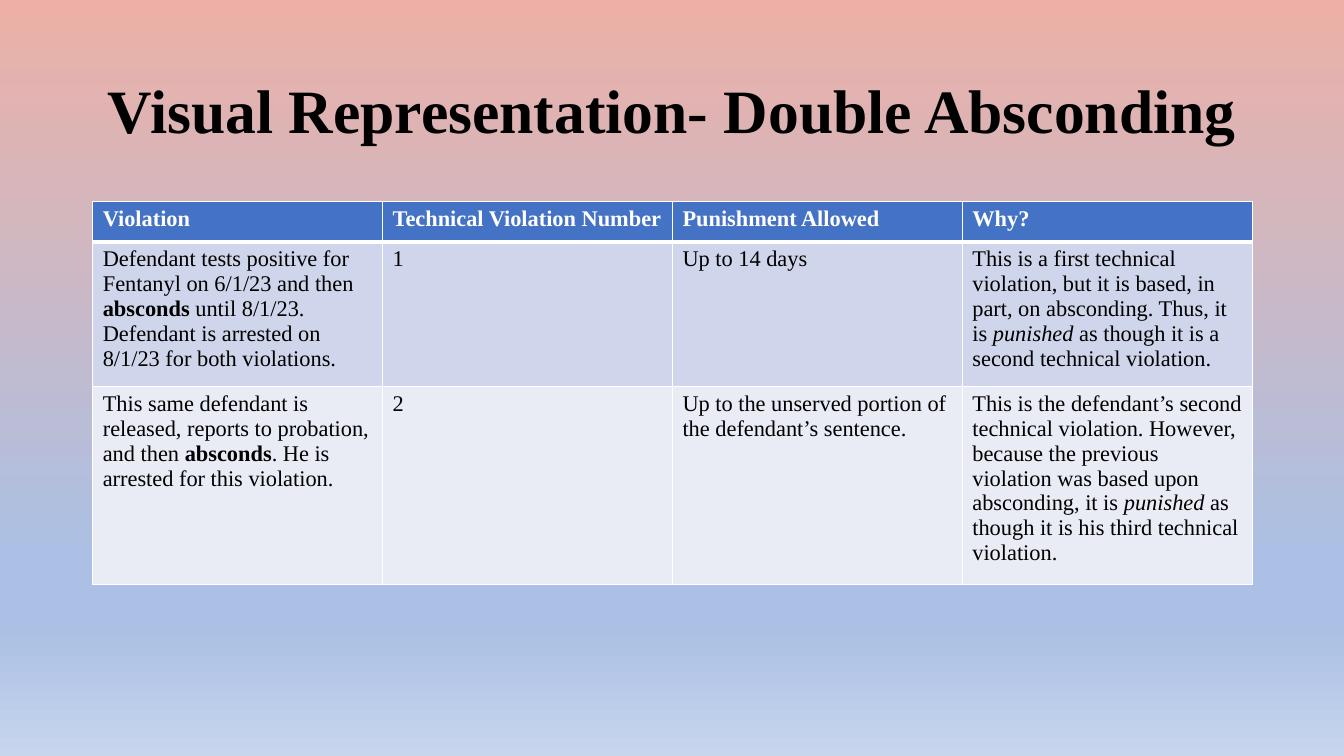
from lxml.etree import SubElement as Sub
from pptx import Presentation
from pptx.dml.color import RGBColor as RGB
from pptx.enum.text import MSO_ANCHOR as Anchor, PP_ALIGN as Align
from pptx.oxml.ns import qn
from pptx.util import Inches, Pt

FONT = "Times New Roman"
BLACK = RGB(0x00, 0x00, 0x00)
WHITE = RGB(0xFF, 0xFF, 0xFF)
BLUE = RGB(0x44, 0x72, 0xC4)
MID = RGB(0xCF, 0xD5, 0xEA)
PALE = RGB(0xE9, 0xEB, 0xF5)
ROSE = RGB(0xEC, 0xB0, 0xA6)
SKY = RGB(0xAB, 0xC0, 0xE4)
MIST = RGB(0xC7, 0xD5, 0xED)

STOPS = [(0, ROSE), (74, SKY), (83, SKY), (100, MIST)]
LEFT, WIDTH = 0.92, 11.5
FILLS = [BLUE, MID, PALE]
HEIGHTS = [0.4, 1.33, 1.83]

# Each cell is a list of (text, style) runs: "b" bold, "i" italic, "" plain.
ROWS = [
    [
        [("Violation", "b")],
        [("Technical Violation Number", "b")],
        [("Punishment Allowed", "b")],
        [("Why?", "b")],
    ],
    [
        [("Defendant tests positive for Fentanyl on 6/1/23 and then ", ""),
         ("absconds", "b"),
         (" until 8/1/23. Defendant is arrested on 8/1/23 for both violations.", "")],
        [("1", "")],
        [("Up to 14 days", "")],
        [("This is a first technical violation, but it is based, in part, "
          "on absconding. Thus, it is ", ""),
         ("punished", "i"),
         (" as though it is a second technical violation.", "")],
    ],
    [
        [("This same defendant is released, reports to probation, and then ", ""),
         ("absconds", "b"),
         (". He is arrested for this violation.", "")],
        [("2", "")],
        [("Up to the unserved portion of the defendant’s sentence.", "")],
        [("This is the defendant’s second technical violation. However, because "
          "the previous violation was based upon absconding, it is ", ""),
         ("punished", "i"),
         (" as though it is his third technical violation.", "")],
    ],
]


def add_run(para, text, style, size, color):
    run = para.add_run()
    run.text = text
    font = run.font
    font.name, font.size = FONT, Pt(size)
    font.bold, font.italic = style == "b", style == "i"
    font.color.rgb = color


def set_back(slide):
    """Fill the background with a gradient running from top to bottom."""
    fill = slide.background.fill
    fill.gradient()
    fill.gradient_angle = 270
    stops = slide.element.find(".//" + qn("a:gsLst"))
    stops.clear()
    for pos, color in STOPS:
        stop = Sub(stops, qn("a:gs"), pos=str(pos * 1000))
        Sub(stop, qn("a:srgbClr"), val=str(color))


def add_title(slide, text):
    box = slide.shapes.add_textbox(
        Inches(LEFT), Inches(0.4), Inches(WIDTH), Inches(1.45))
    frame = box.text_frame
    frame.word_wrap = True
    frame.vertical_anchor = Anchor.MIDDLE
    para = frame.paragraphs[0]
    para.alignment = Align.CENTER
    para.line_spacing = 0.9
    add_run(para, text, "b", 44, BLACK)


def set_edges(cell, top, base):
    """Draw white cell borders; top and base are widths in points."""
    props = cell._tc.get_or_add_tcPr()
    for side, width in (("L", 1), ("R", 1), ("T", top), ("B", base)):
        line = Sub(props, qn("a:ln" + side), w=str(Pt(width)))
        fill = Sub(line, qn("a:solidFill"))
        Sub(fill, qn("a:srgbClr"), val=str(WHITE))


def add_grid(slide):
    count = len(ROWS[0])
    table = slide.shapes.add_table(
        len(ROWS), count, Inches(LEFT), Inches(2),
        Inches(WIDTH), Inches(sum(HEIGHTS))).table
    for col in table.columns:
        col.width = Inches(WIDTH / count)
    for r, row in enumerate(ROWS):
        table.rows[r].height = Inches(HEIGHTS[r])
        color = BLACK if r else WHITE
        for c, runs in enumerate(row):
            cell = table.cell(r, c)
            set_edges(cell, 3 if r == 1 else 1, 1 if r else 3)
            cell.fill.solid()
            cell.fill.fore_color.rgb = FILLS[r]
            for text, style in runs:
                add_run(cell.text_frame.paragraphs[0], text, style, 16, color)


def main():
    deck = Presentation()
    deck.slide_width, deck.slide_height = Inches(13.33), Inches(7.5)
    slide = deck.slides.add_slide(deck.slide_layouts[6])
    set_back(slide)
    add_title(slide, "Visual Representation- Double Absconding")
    add_grid(slide)
    deck.save("out.pptx")


if __name__ == "__main__":
    main()
